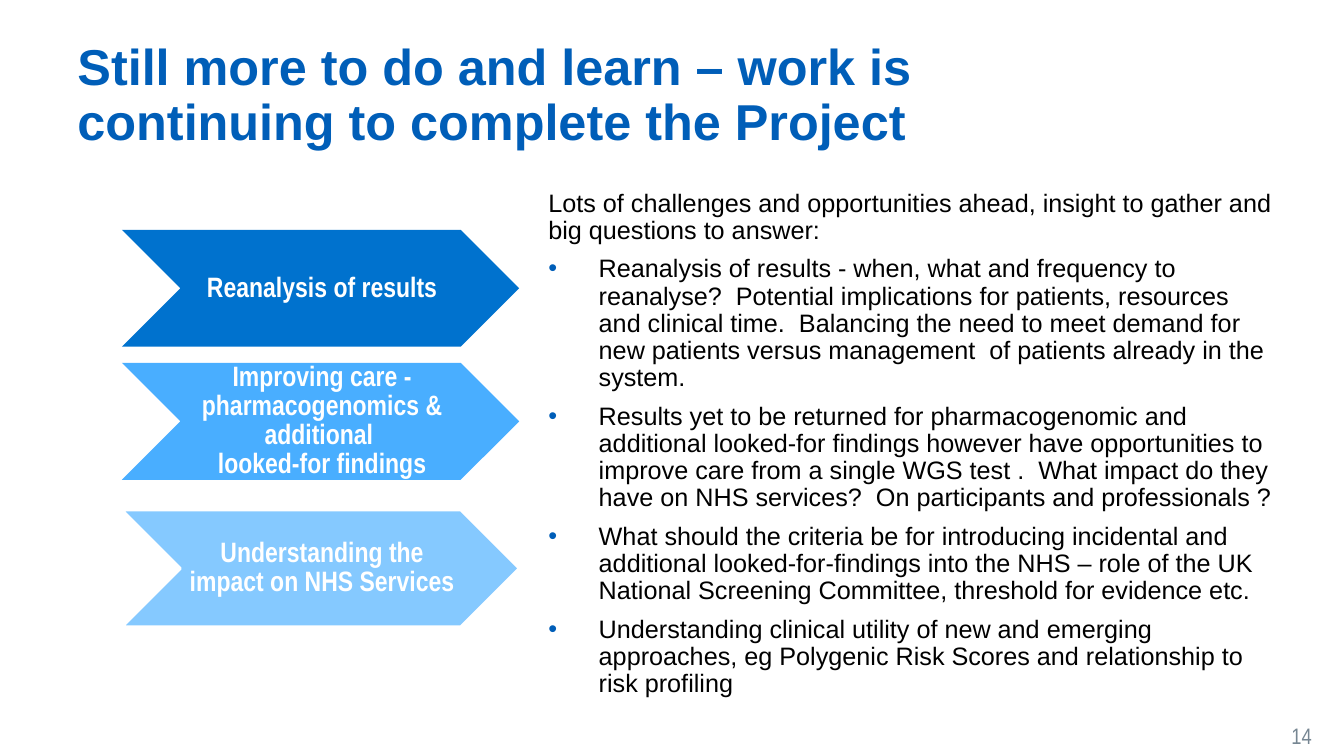
import dataclasses

import pptx
import pptx.dml.color
import pptx.enum.shapes
import pptx.enum.text
import pptx.oxml.ns
import pptx.util
from lxml import etree

Inches = pptx.util.Inches
Pt = pptx.util.Pt

COLORS = {
    "heading": "005EB8",
    "body": "000000",
    "page_number": "768692",
    "white": "FFFFFF",
    "reanalysis": "0072CE",
    "improving": "49AEFF",
    "understanding": "85C9FF",
}
INTRODUCTION = "Lots of challenges and opportunities ahead, insight to gather and big questions to answer:"
QUESTIONS = [
    "Reanalysis of results - when, what and frequency to reanalyse?  Potential implications for patients, "
    "resources and clinical time.  Balancing the need to meet demand for new patients versus management  of "
    "patients already in the system.",
    "Results yet to be returned for pharmacogenomic and additional looked-for findings however have "
    "opportunities to improve care from a single WGS test .  What impact do they have on NHS services?  "
    "On participants and professionals ?",
    "What should the criteria be for introducing incidental and additional looked-for-findings into the NHS – "
    "role of the UK National Screening Committee, threshold for evidence etc.",
    "Understanding clinical utility of new and emerging approaches, eg Polygenic Risk Scores and relationship "
    "to risk profiling",
]


@dataclasses.dataclass(frozen=True)
class TextStyle:
    size: float
    color: str
    font: str = "Arial"
    bold: bool = False
    line_spacing: float = 0.9


@dataclasses.dataclass(frozen=True)
class Theme:
    text: str
    top: float
    fill: str
    outlined: bool = False


HEADING = TextStyle(36, "heading", bold=True)
BODY = TextStyle(18, "body")
PAGE_NUMBER = TextStyle(16, "page_number", "Arial Narrow", line_spacing=1.0)
THEME_LABEL = TextStyle(20, "white", "Arial Narrow", True, 0.87)

THEMES = [
    Theme("Reanalysis of results", 2.28, "reanalysis"),
    Theme("Improving care - pharmacogenomics & additional \vlooked-for findings", 3.6, "improving"),
    Theme("Understanding the impact on NHS Services", 5.06, "understanding", True),
]


def rgb(name: str) -> pptx.dml.color.RGBColor:
    return pptx.dml.color.RGBColor.from_string(COLORS[name])


def style_paragraph(paragraph, style: TextStyle) -> None:
    paragraph.line_spacing = style.line_spacing
    for run in paragraph.runs:
        run.font.name = style.font
        run.font.size = Pt(style.size)
        run.font.bold = style.bold
        run.font.color.rgb = rgb(style.color)


def add_bullet(paragraph) -> None:
    properties = paragraph._p.get_or_add_pPr()
    properties.set("marL", str(Inches(0.5)))
    properties.set("indent", str(Inches(-0.5)))
    qualified = pptx.oxml.ns.qn
    bullet_color = etree.SubElement(properties, qualified("a:buClr"))
    etree.SubElement(bullet_color, qualified("a:srgbClr"), val=COLORS["heading"])
    etree.SubElement(properties, qualified("a:buFont"), typeface="Arial")
    etree.SubElement(properties, qualified("a:buChar"), char="•")


def add_text(slide, text: str, left: float, top: float, width: float, height: float, style: TextStyle):
    box = slide.shapes.add_textbox(Inches(left), Inches(top), Inches(width), Inches(height))
    text_frame = box.text_frame
    text_frame.word_wrap = True
    text_frame.text = text
    style_paragraph(text_frame.paragraphs[0], style)
    return text_frame


def add_questions(slide) -> None:
    text_frame = add_text(slide, INTRODUCTION, 5.34, 1.84, 7.37, 5.34, BODY)
    for question in QUESTIONS:
        paragraph = text_frame.add_paragraph()
        paragraph.text = question
        add_bullet(paragraph)
        paragraph.space_before = Pt(8)
        style_paragraph(paragraph, BODY)


def add_theme(slide, theme: Theme) -> None:
    shape = slide.shapes.add_shape(
        pptx.enum.shapes.MSO_SHAPE.CHEVRON, Inches(1.21), Inches(theme.top), Inches(3.94), Inches(1.16)
    )
    shape.shadow.inherit = False
    shape.fill.solid()
    shape.fill.fore_color.rgb = rgb(theme.fill)
    if theme.outlined:
        shape.line.color.rgb = rgb("white")
        shape.line.width = Pt(2)
    else:
        shape.line.fill.background()
    text_frame = shape.text_frame
    text_frame.word_wrap = True
    text_frame.vertical_anchor = pptx.enum.text.MSO_ANCHOR.MIDDLE
    text_frame.margin_left = Inches(0.03)
    text_frame.margin_right = 0
    text_frame.margin_top = text_frame.margin_bottom = Inches(0.01)
    text_frame.text = theme.text
    paragraph = text_frame.paragraphs[0]
    paragraph.alignment = pptx.enum.text.PP_ALIGN.CENTER
    style_paragraph(paragraph, THEME_LABEL)


def main() -> None:
    presentation = pptx.Presentation()
    presentation.slide_width = Inches(13.33)
    presentation.slide_height = Inches(7.5)
    slide = presentation.slides.add_slide(presentation.slide_layouts[6])
    heading = add_text(
        slide, "Still more to do and learn – work is continuing to complete the Project",
        0.67, 0.82, 10.73, 0.73, HEADING,
    )
    heading.vertical_anchor = pptx.enum.text.MSO_ANCHOR.BOTTOM
    add_text(slide, "14", 12.71, 7.11, 0.54, 0.32, PAGE_NUMBER)
    add_questions(slide)
    for theme in THEMES:
        add_theme(slide, theme)
    presentation.save("out.pptx")


if __name__ == "__main__":
    main()
